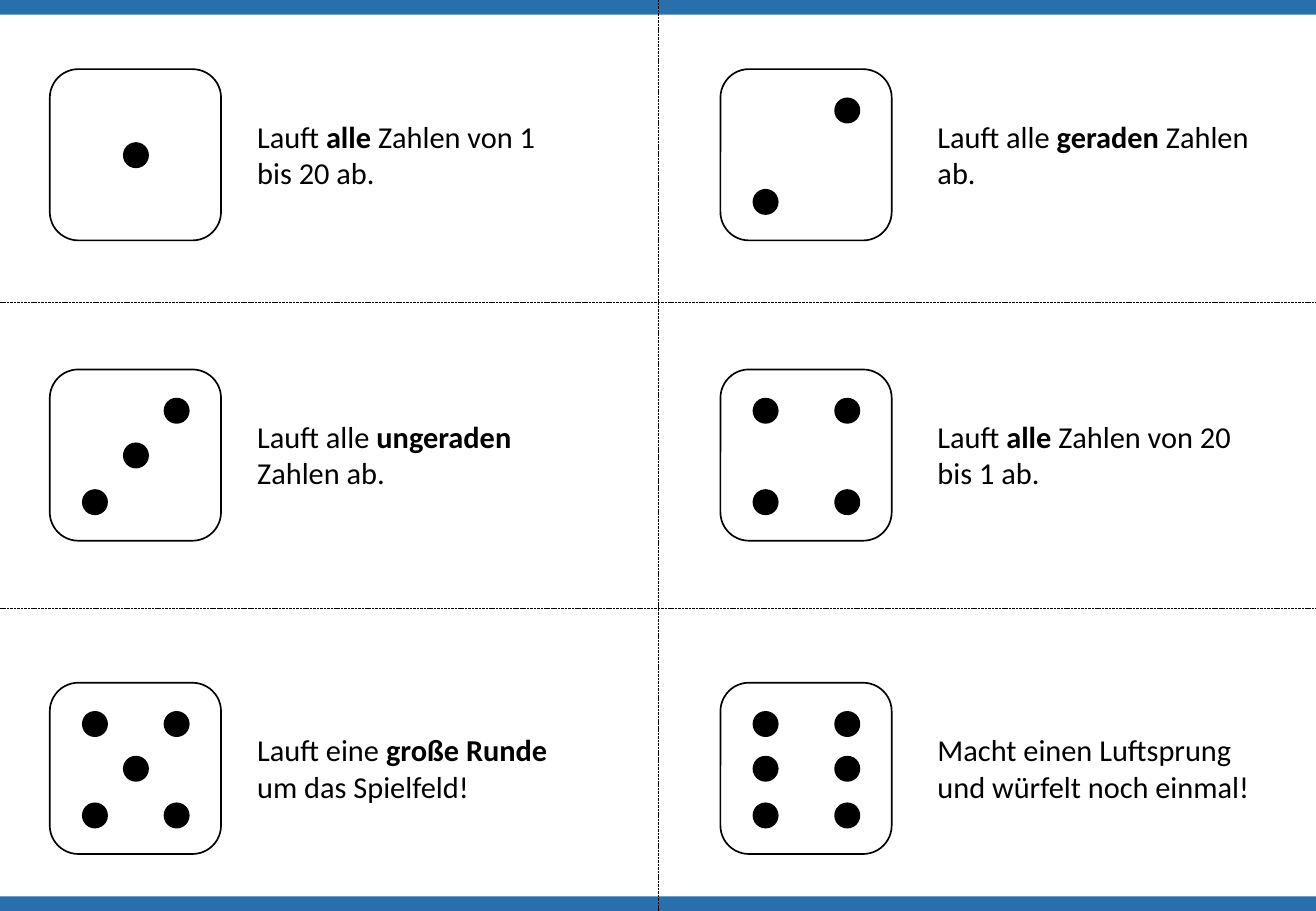
"""Build a sheet of six dice task cards."""
from lxml import etree
from pptx import Presentation
from pptx.dml.color import RGBColor
from pptx.enum import dml, shapes, text
from pptx.oxml import ns
from pptx.util import Pt

BLUE = RGBColor(0x28, 0x6F, 0xAB)
BLACK = RGBColor(0, 0, 0)
WHITE = RGBColor(255, 255, 255)

WIDTH, HEIGHT, BAR = 780, 540, 8.7
DIE, PIP = 101.5, 14.4
DIE_LEFT, DIE_TOP = (29.5, 427), (41, 219, 404.7)
TEXT_LEFT, TEXT_DROP = (145.4, 548.6), 25.3
PIP_X, PIP_Y = (19.6, 43.9, 68), (17.3, 43.8, 71.5)

DIAGONAL = [(2, 0), (0, 2)]
CORNERS = DIAGONAL + [(0, 0), (2, 2)]
CENTRE = [(1, 1)]
CARDS = [
    (CENTRE, ("Lauft ", "alle", " Zahlen von 1 bis 20 ab.")),
    (DIAGONAL, ("Lauft alle ", "geraden ", "Zahlen ab.")),
    (DIAGONAL + CENTRE, ("Lauft alle ", "ungeraden", " Zahlen ab.")),
    (CORNERS, ("Lauft ", "alle", " Zahlen von 20 bis 1 ab.")),
    (CORNERS + CENTRE, ("Lauft eine ", "große Runde ", "um das Spielfeld!")),
    (CORNERS + [(0, 1), (2, 1)],
     ("Macht einen Luftsprung und würfelt noch einmal!",)),
]


class Sheet:
    def __init__(self, s, font="Calibri", size=18):
        self.s, self.font, self.size = s, font, size

    def shape(self, kind, x, y, w, h, fill, line=None):
        sp = self.s.shapes.add_shape(kind, Pt(x), Pt(y), Pt(w), Pt(h))
        sp.shadow.inherit = False
        sp.fill.solid()
        sp.fill.fore_color.rgb = fill
        if line is None:
            sp.line.fill.background()
        else:
            sp.line.color.rgb = line
            sp.line.width = Pt(1)

    def die(self, x, y, pips):
        self.shape(shapes.MSO_SHAPE.ROUNDED_RECTANGLE, x, y, DIE, DIE, WHITE, BLACK)
        for col, row in pips:
            self.shape(shapes.MSO_SHAPE.OVAL, x + PIP_X[col], y + PIP_Y[row],
                       PIP, PIP, BLACK, BLACK)

    def task(self, x, y, parts):
        tf = self.s.shapes.add_textbox(Pt(x), Pt(y), Pt(201.6), Pt(51)).text_frame
        tf.word_wrap = True
        tf.auto_size = text.MSO_AUTO_SIZE.SHAPE_TO_FIT_TEXT
        p = tf.paragraphs[0]
        p.font.name, p.font.size = self.font, Pt(self.size)
        p.font.color.rgb = BLACK
        for i, part in enumerate(parts):
            r = p.add_run()
            r.text = part
            r.font.bold = i == 1

    def cut(self, x1, y1, x2, y2):
        c = self.s.shapes.add_connector(shapes.MSO_CONNECTOR.STRAIGHT,
                                        Pt(x1), Pt(y1), Pt(x2), Pt(y2))
        c.line.color.rgb = BLACK
        c.line.width = Pt(0.5)
        c.line.dash_style = dml.MSO_LINE.SQUARE_DOT
        etree.SubElement(c._element.spPr, ns.qn("a:effectLst"))


def main():
    prs = Presentation()
    prs.slide_width, prs.slide_height = Pt(WIDTH), Pt(HEIGHT)
    sheet = Sheet(prs.slides.add_slide(prs.slide_layouts[6]))
    for y in (0, HEIGHT - BAR):
        sheet.shape(shapes.MSO_SHAPE.RECTANGLE, 0, y, WIDTH, BAR, BLUE)
    for i, (pips, parts) in enumerate(CARDS):
        row, col = divmod(i, 2)
        sheet.die(DIE_LEFT[col], DIE_TOP[row], pips)
        sheet.task(TEXT_LEFT[col], DIE_TOP[row] + TEXT_DROP, parts)
    for y in (179.3, 360.7):
        sheet.cut(0, y, WIDTH, y)
    sheet.cut(WIDTH / 2, HEIGHT, WIDTH / 2, 0)
    prs.save("out.pptx")


if __name__ == "__main__":
    main()
